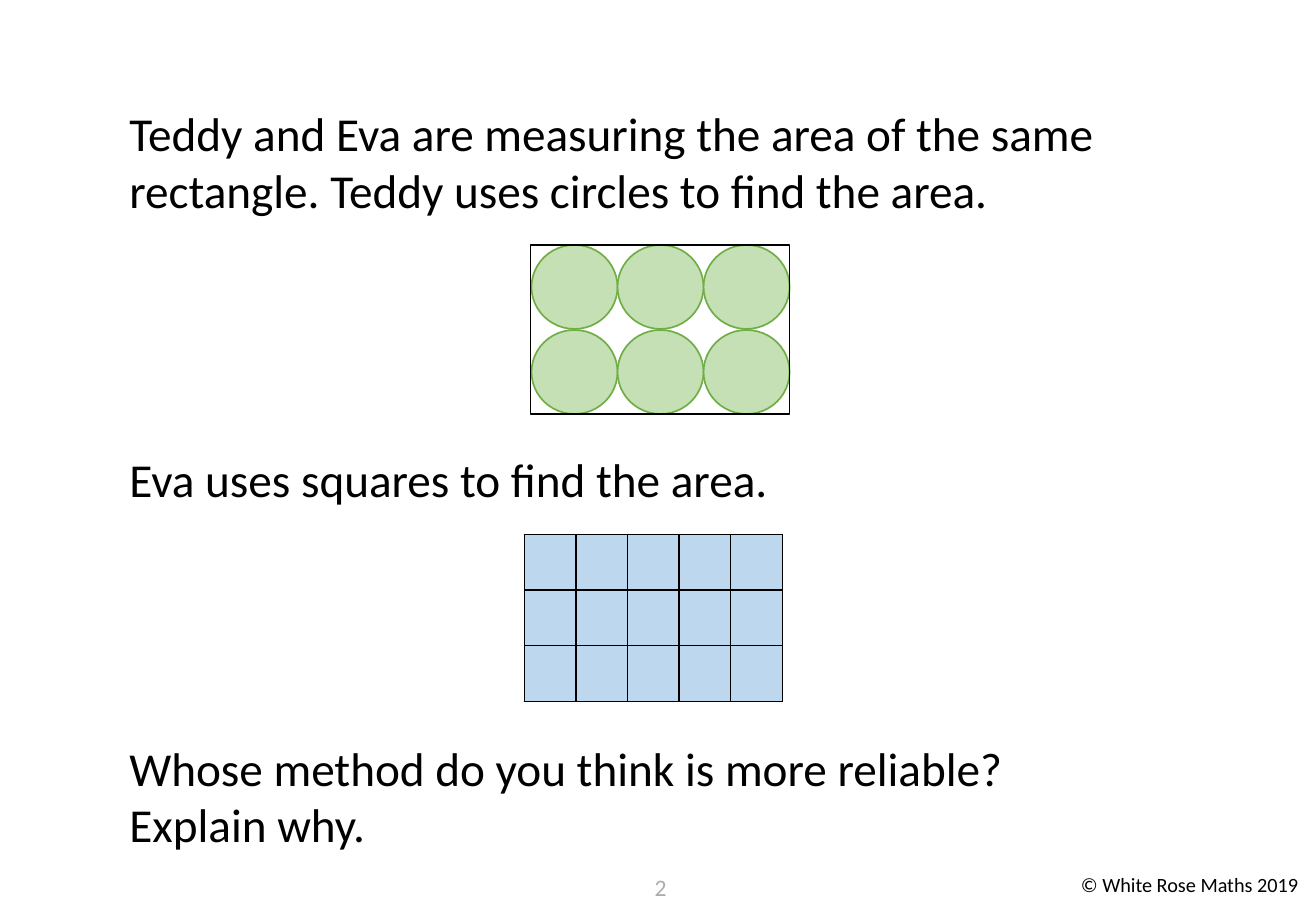
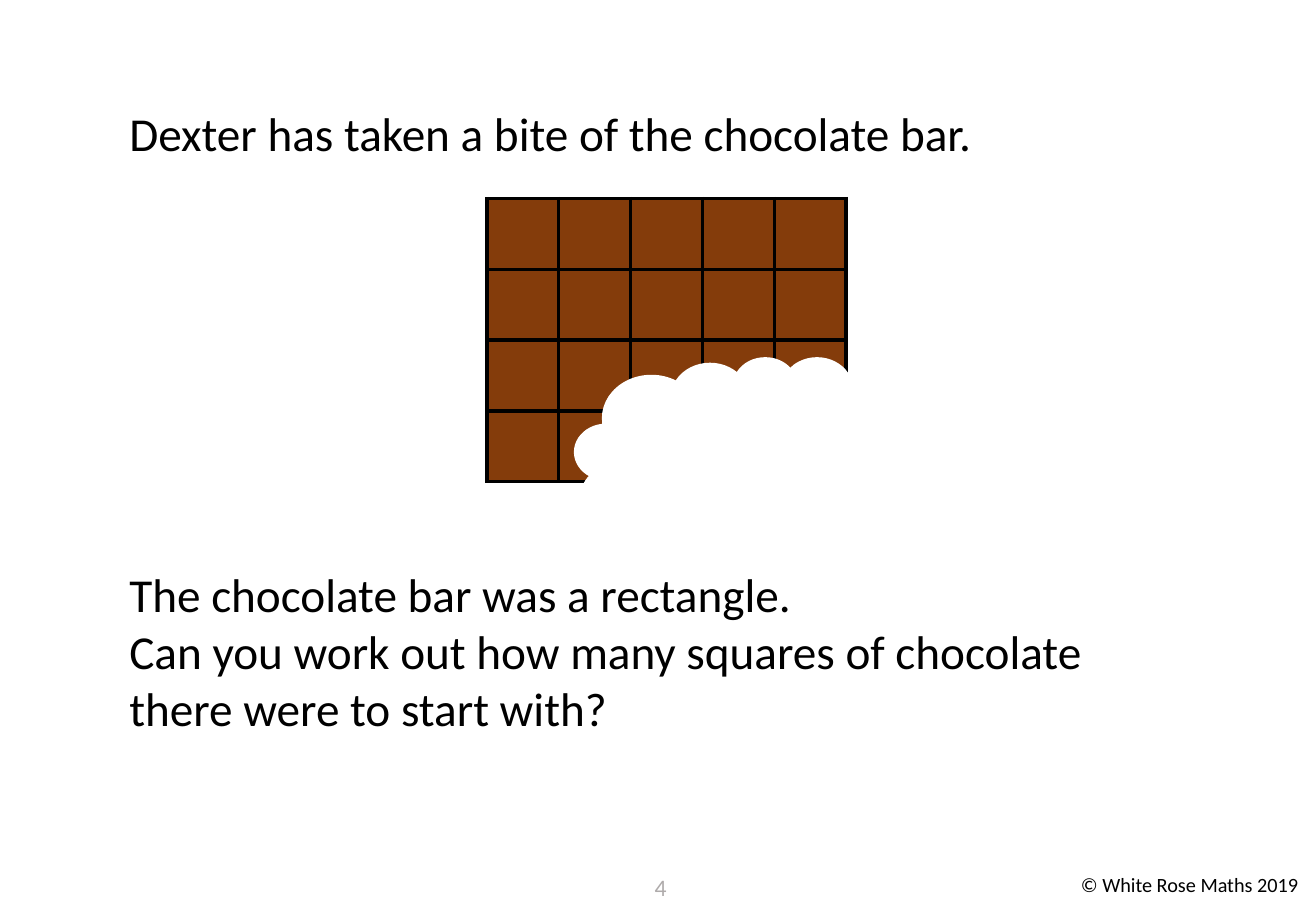
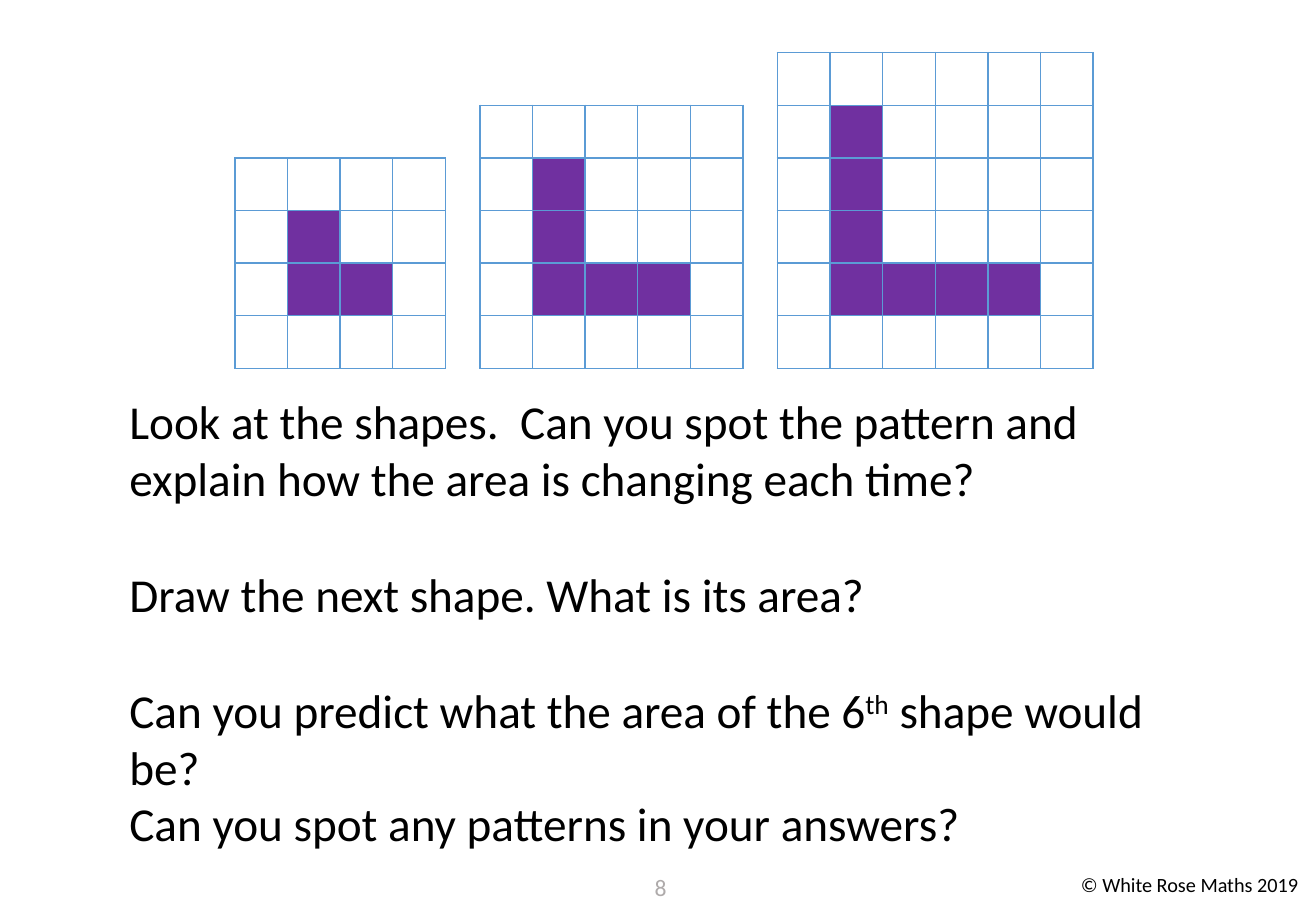
from lxml import etree
from pptx import Presentation
from pptx.dml.color import RGBColor
from pptx.enum import shapes, text
from pptx.oxml.ns import qn
from pptx.util import Emu, Pt

# Shared look: 120 px to the inch
PX = 7620
WIDTH, HEIGHT = 1300, 900
FONT = "Calibri"
BLACK, GREY, WHITE = "000000", "AFABAB", "FFFFFF"
LIGHT_GREEN, GREEN = "C5E0B4", "70AD47"
LIGHT_BLUE, BLUE = "BDD7EE", "5B9BD5"
CHOCOLATE, PURPLE = "843C0B", "7030A0"
BODY_TOP, BODY_LEFT, BODY_WIDTH, LINE_HEIGHT = 97, 116, 1057, 57


def px(n):
    return Emu(n * PX)


def box(x, y, w, h):
    return px(x), px(y), px(w), px(h)


def rgb(value):
    return RGBColor.from_string(value)


def add_text(s, paragraphs, x, y, w, h, size=28, color=BLACK,
             align=text.PP_ALIGN.LEFT):
    """Write one paragraph per string; text between ^ marks is superscript."""
    tf = s.shapes.add_textbox(*box(x, y, w, h)).text_frame
    tf.word_wrap = True
    for i, content in enumerate(paragraphs):
        p = tf.add_paragraph() if i else tf.paragraphs[0]
        p.alignment = align
        for j, part in enumerate(content.split("^")):
            r = p.add_run()
            r.text = part
            r.font.size, r.font.name = Pt(size), FONT
            r.font.color.rgb = rgb(color)
            if j % 2:
                r._r.get_or_add_rPr().set("baseline", "30000")


def add_body(s, line, *paragraphs, lines=1):
    """Place body text on the line grid, starting at the given line."""
    add_text(s, paragraphs, BODY_LEFT, BODY_TOP + line * LINE_HEIGHT,
             BODY_WIDTH, lines * LINE_HEIGHT + 12)


def add_shape(s, kind, x, y, w, h, fill=None, line=BLACK):
    sp = s.shapes.add_shape(kind, *box(x, y, w, h))
    sp.shadow.inherit = False
    if fill:
        sp.fill.solid()
        sp.fill.fore_color.rgb = rgb(fill)
    else:
        sp.fill.background()
    sp.line.color.rgb = rgb(line)
    sp.line.width = Pt(1)


def set_borders(cell, color, width):
    tcPr = cell._tc.get_or_add_tcPr()
    for side in ("a:lnL", "a:lnR", "a:lnT", "a:lnB"):
        ln = etree.SubElement(tcPr, qn(side), w=str(Pt(width)))
        fill = etree.SubElement(ln, qn("a:solidFill"))
        etree.SubElement(fill, qn("a:srgbClr"), val=color)


def add_grid(s, x, y, cols, rows, cell_w, cell_h, fill_at, line=BLACK, width=1):
    """Draw a table of equal cells; fill_at(row, col) gives a colour or None."""
    table = s.shapes.add_table(
        rows, cols, *box(x, y, cols * cell_w, rows * cell_h)).table
    table.first_row = table.horz_banding = False
    for col in table.columns:
        col.width = px(cell_w)
    for row in table.rows:
        row.height = px(cell_h)
    for r in range(rows):
        for c in range(cols):
            cell = table.cell(r, c)
            set_borders(cell, line, width)
            color = fill_at(r, c)
            if color:
                cell.fill.solid()
                cell.fill.fore_color.rgb = rgb(color)
            else:
                cell.fill.background()


def add_l_shape(s, x, size, bottom=364, cell=52):
    """Draw a square grid holding an L one cell in from each edge."""
    def fill_at(r, c):
        inside = 1 <= r <= size - 2 and 1 <= c <= size - 2
        return PURPLE if inside and (c == 1 or r == size - 2) else None

    add_grid(s, x, bottom - size * cell, size, size, cell, cell, fill_at, BLUE)


def new_slide(prs, number):
    s = prs.slides.add_slide(prs.slide_layouts[6])
    add_text(s, ["© White Rose Maths 2019"], 1056, 856, 244, 36, size=12)
    add_text(s, [str(number)], 622, 856, 61, 44, size=14, color=GREY,
             align=text.PP_ALIGN.CENTER)
    return s


def measuring_slide(prs):
    s = new_slide(prs, 2)
    add_body(s, 0, "Teddy and Eva are measuring the area of the same rectangle. "
             "Teddy uses circles to find the area.", lines=2)
    add_body(s, 6, "Eva uses squares to find the area.")
    add_body(s, 11, "Whose method do you think is more reliable?",
             "Explain why.", lines=2)
    # Rectangle packed with circles
    for row in range(2):
        for col in range(3):
            add_shape(s, shapes.MSO_SHAPE.OVAL, 525 + col * 85, 242 + row * 84,
                      85, 83, LIGHT_GREEN, GREEN)
    add_shape(s, shapes.MSO_SHAPE.RECTANGLE, 524, 242, 256, 167)
    # Rectangle covered with squares
    add_grid(s, 518, 528, 5, 3, 51, 55, lambda r, c: LIGHT_BLUE)


def chocolate_slide(prs):
    s = new_slide(prs, 4)
    add_body(s, 0, "Dexter has taken a bite of the chocolate bar.")
    add_body(s, 8, "The chocolate bar was a rectangle.",
             "Can you work out how many squares of chocolate there were "
             "to start with?", lines=3)
    # Bar, with a white cloud as the bite
    add_grid(s, 481, 196, 5, 4, 71, 70, lambda r, c: CHOCOLATE, width=2.25)
    add_shape(s, shapes.MSO_SHAPE.CLOUD, 568, 353, 308, 198, WHITE, WHITE)


def pattern_slide(prs):
    s = new_slide(prs, 8)
    add_body(s, 5, "Look at the shapes.  Can you spot the pattern and explain "
             "how the area is changing each time?", lines=2)
    add_body(s, 8, "Draw the next shape. What is its area?")
    add_body(s, 10, "Can you predict what the area of the 6^th^ shape would be?",
             "Can you spot any patterns in your answers?", lines=3)
    # Growing L shapes
    for x, size in ((232, 4), (474, 5), (768, 6)):
        add_l_shape(s, x, size)


def main():
    prs = Presentation()
    prs.slide_width, prs.slide_height = px(WIDTH), px(HEIGHT)
    measuring_slide(prs)
    chocolate_slide(prs)
    pattern_slide(prs)
    prs.save("out.pptx")


if __name__ == "__main__":
    main()
